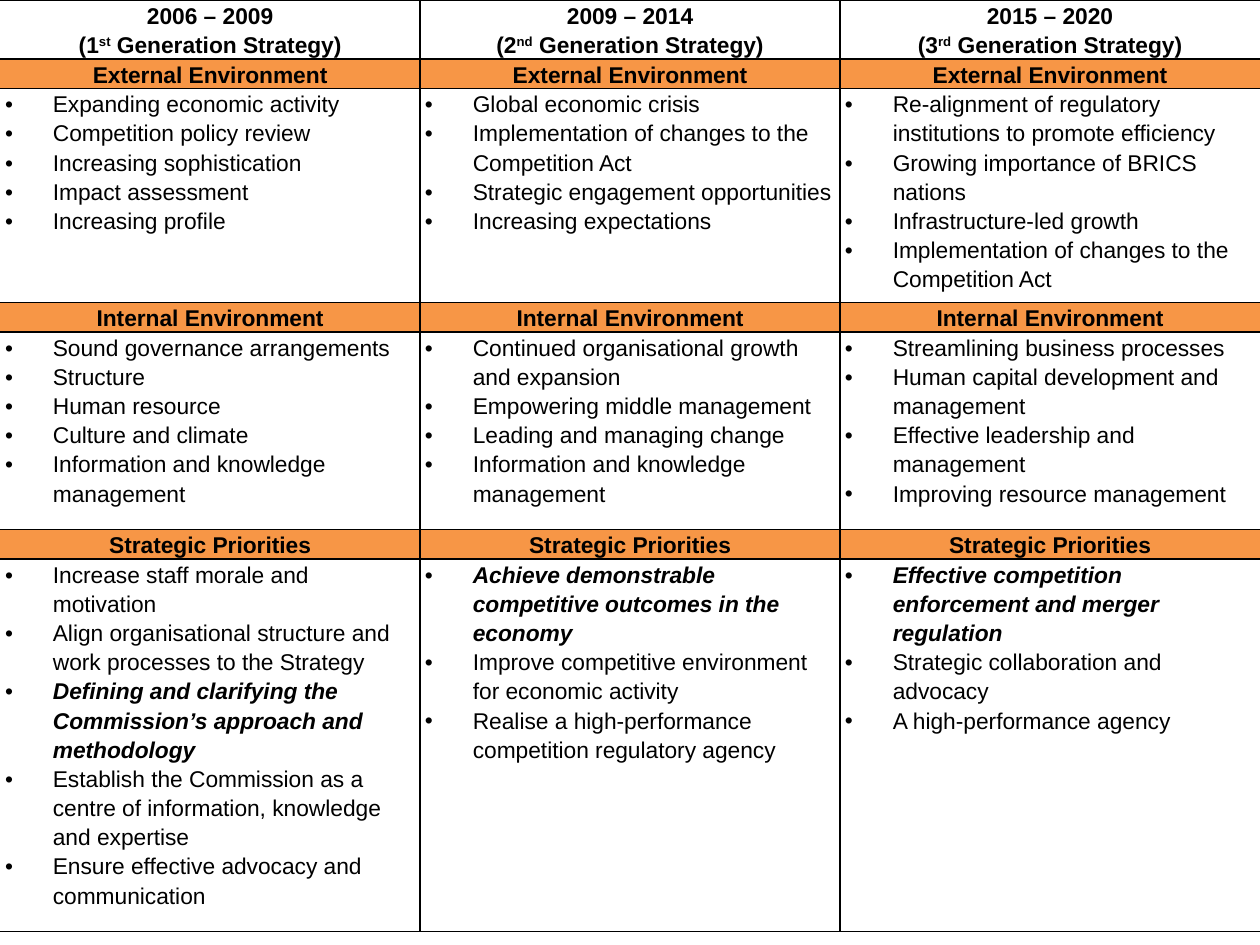
"""Build a slide comparing three generations of strategy in one table."""
from lxml import etree
from pptx import Presentation
from pptx.dml.color import RGBColor
from pptx.enum.text import PP_ALIGN
from pptx.oxml.ns import qn
from pptx.util import Inches, Pt

CENTER, LEFT = PP_ALIGN.CENTER, PP_ALIGN.LEFT
BLACK = RGBColor(0x00, 0x00, 0x00)
ORANGE = RGBColor(0xF7, 0x96, 0x46)

HEADS = [
    ("2006 – 2009", "1", "st"),
    ("2009 – 2014", "2", "nd"),
    ("2015 – 2020", "3", "rd"),
]
BANDS = [
    ("External Environment", [
        ["Expanding economic activity", "Competition policy review",
         "Increasing sophistication", "Impact assessment",
         "Increasing profile"],
        ["Global economic crisis",
         "Implementation of changes to the Competition Act",
         "Strategic engagement opportunities", "Increasing expectations"],
        ["Re-alignment of regulatory institutions to promote efficiency",
         "Growing importance of BRICS nations", "Infrastructure-led growth",
         "Implementation of changes to the Competition Act"],
    ]),
    ("Internal Environment", [
        ["Sound governance arrangements", "Structure", "Human resource",
         "Culture and climate", "Information and knowledge management"],
        ["Continued organisational growth and expansion",
         "Empowering middle management", "Leading and managing change",
         "Information and knowledge management"],
        ["Streamlining business processes",
         "Human capital development and management",
         "Effective leadership and management",
         "Improving resource management"],
    ]),
    ("Strategic Priorities", [
        ["Increase staff morale and motivation",
         "Align organisational structure and work processes to the Strategy",
         "Defining and clarifying the Commission’s approach and methodology",
         "Establish the Commission as a centre of information, knowledge "
         "and expertise",
         "Ensure effective advocacy and communication"],
        ["Achieve demonstrable competitive outcomes in the economy",
         "Improve competitive environment for economic activity",
         "Realise a high-performance competition regulatory agency"],
        ["Effective competition enforcement and merger regulation",
         "Strategic collaboration and advocacy",
         "A high-performance agency"],
    ]),
]
STRONG = {BANDS[2][1][0][2], BANDS[2][1][1][0], BANDS[2][1][2][0]}
ROWS = [0.47, 0.23, 1.7, 0.23, 1.57, 0.23, 2.96]
WIDTH = 10
INDENT = Inches(0.38)

FONT = {"name": "Arial", "size": Pt(13), "bold": False, "italic": False}
TITLE = {**FONT, "bold": True}
KEY = {**TITLE, "italic": True}
MARGINS = {"margin_left": Inches(0.04), "margin_right": Inches(0.04),
           "margin_top": 0, "margin_bottom": 0}
PLAIN = {"first_row": False, "horz_banding": False}


def apply(item, values):
    for name, value in values.items():
        setattr(item, name, value)


def add_run(para, text, style, raised=False):
    run = para.add_run()
    run.text = text
    apply(run.font, style)
    run.font.color.rgb = BLACK
    if raised:
        run.font._element.set("baseline", "30000")


def add_bullet(para):
    props = para._p.get_or_add_pPr()
    props.set("marL", str(INDENT))
    props.set("indent", str(-INDENT))
    etree.SubElement(props, qn("a:buFont")).set("typeface", "Arial")
    etree.SubElement(props, qn("a:buChar")).set("char", "•")


def add_edges(cell, col):
    props = cell._tc.get_or_add_tcPr()
    shown = {"L": col > 0, "R": col < len(HEADS) - 1, "T": True, "B": True}
    for side, on in shown.items():
        line = etree.SubElement(props, qn(f"a:ln{side}"), w=str(Pt(1)))
        if on:
            fill = etree.SubElement(line, qn("a:solidFill"))
            etree.SubElement(fill, qn("a:srgbClr")).set("val", str(BLACK))
        else:
            etree.SubElement(line, qn("a:noFill"))


def fill_cell(cell, col, lines, color=None, bullets=False):
    apply(cell, MARGINS)
    add_edges(cell, col)
    if color is None:
        cell.fill.background()
    else:
        cell.fill.solid()
        cell.fill.fore_color.rgb = color
    frame = cell.text_frame
    for at, runs in enumerate(lines):
        para = frame.add_paragraph() if at else frame.paragraphs[0]
        if bullets:
            add_bullet(para)
        apply(para, {"alignment": LEFT if bullets else CENTER,
                     "line_spacing": 1.15})
        for run in runs:
            add_run(para, *run)


def main():
    deck = Presentation()
    apply(deck, {"slide_width": Inches(WIDTH), "slide_height": Inches(7.5)})
    slide = deck.slides.add_slide(deck.slide_layouts[6])
    table = slide.shapes.add_table(len(ROWS), len(HEADS), 0, 0,
                                   Inches(WIDTH), Inches(sum(ROWS))).table
    apply(table, PLAIN)
    for row, height in zip(table.rows, ROWS):
        row.height = Inches(height)
    for col, (years, number, suffix) in enumerate(HEADS):
        table.columns[col].width = Inches(WIDTH / len(HEADS))
        fill_cell(table.cell(0, col), col, [
            [(years, TITLE)],
            [("(" + number, TITLE), (suffix, TITLE, True),
             (" Generation Strategy)", TITLE)],
        ])
        for at, (title, lists) in enumerate(BANDS):
            row = 2 * at + 1
            fill_cell(table.cell(row, col), col, [[(title, TITLE)]], ORANGE)
            lines = [[(text, KEY if text in STRONG else FONT)]
                     for text in lists[col]]
            fill_cell(table.cell(row + 1, col), col, lines, bullets=True)
    deck.save("out.pptx")


if __name__ == "__main__":
    main()
